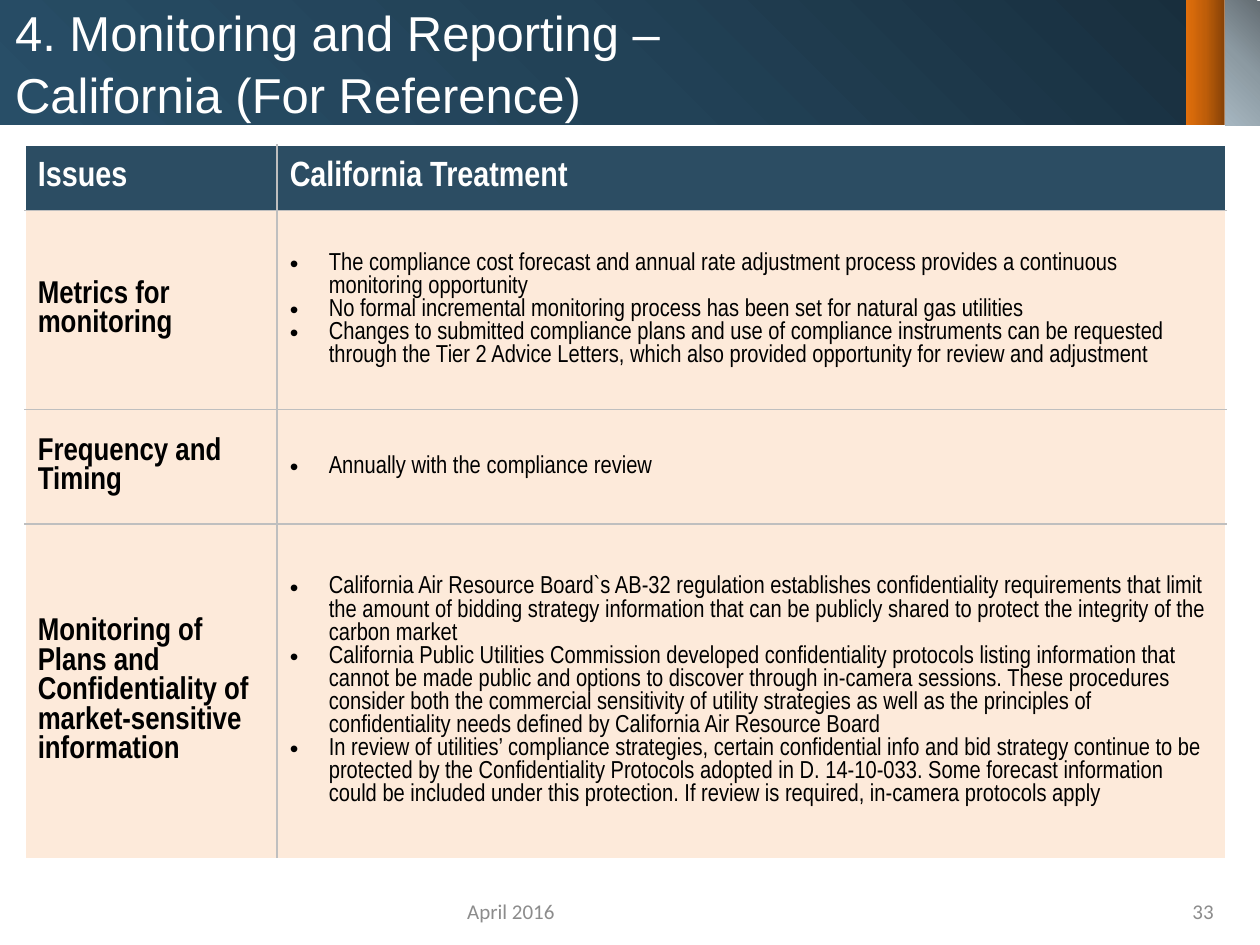
"""Build the California monitoring and reporting reference slide."""
from dataclasses import dataclass

import lxml.etree
import pptx
import pptx.dml.color
import pptx.enum.shapes
import pptx.enum.text
import pptx.oxml.ns
import pptx.util

COLORS = {"head": "2C4D63", "body": "FDEADA", "line": "BFBFBF", "footer": "8C8C8C",
          "white": "FFFFFF", "black": "000000"}
WIDTH, HEIGHT = pptx.util.Inches(10), pptx.util.Inches(7.5)
GRID_COLUMNS, GRID_ROWS = 100, 75
COLUMN_SPANS = (20, 75.3)
ROW_SPANS = (5.2, 15.8, 9.1, 26.6)
BULLET_INDENT = 3.1
ALIGN = pptx.enum.text.PP_ALIGN
MIDDLE = pptx.enum.text.MSO_ANCHOR.MIDDLE
qn = pptx.oxml.ns.qn


@dataclass
class Area:
    left: float
    top: float
    width: float
    height: float


@dataclass
class Band:
    area: Area
    stops: tuple[str, str, str]
    angle: int
    rotation: int = 0


@dataclass
class Footer:
    area: Area
    text: str
    align: ALIGN


@dataclass
class Issue:
    name: str
    treatments: tuple[str, ...]


BANDS = (
    Band(Area(0, 0, 96, 9.9), ("182E3D", "224257", "284E67"), 135),
    Band(Area(90.7, 3.4, 9.9, 3.1), ("864207", "BF5E09", "E26F0B"), 90, 90),
    Band(Area(93.7, 3.6, 9.9, 2.8), ("636C72", "8C9AA2", "A6B6C0"), 45, 90),
)
FOOTERS = (
    Footer(Area(89.4, 70.8, 7.9, 3.1), "33", ALIGN.RIGHT),
    Footer(Area(31.1, 70.6, 18.9, 3.5), "April 2016", ALIGN.CENTER),
)
TITLE_AREA = Area(0.2, 0.6, 93.9, 8.6)
TABLE_AREA = Area(2, 11.5, sum(COLUMN_SPANS), sum(ROW_SPANS))
HEADINGS = ("Issues", "California Treatment")
ISSUES = (
    Issue("Metrics for monitoring", (
        "The compliance cost forecast and annual rate adjustment process provides a "
        "continuous monitoring opportunity",
        "No formal incremental monitoring process has been set for natural gas utilities",
        "Changes to submitted compliance plans and use of compliance instruments can be "
        "requested through the Tier 2 Advice Letters, which also provided opportunity for "
        "review and adjustment")),
    Issue("Frequency and Timing", ("Annually with the compliance review",)),
    Issue("Monitoring of Plans and Confidentiality of market-sensitive information", (
        "California Air Resource Board`s AB-32 regulation establishes confidentiality "
        "requirements that limit the amount of bidding strategy information that can be "
        "publicly shared to protect the integrity of the carbon market",
        "California Public Utilities Commission developed confidentiality protocols listing "
        "information that cannot be made public and options to discover through in-camera "
        "sessions. These procedures consider both the commercial sensitivity of utility "
        "strategies as well as the principles of confidentiality needs defined by California "
        "Air Resource Board",
        "In review of utilities’ compliance strategies, certain confidential info and bid "
        "strategy continue to be protected by the Confidentiality Protocols adopted in "
        "D. 14-10-033. Some forecast information could be included under this protection. If "
        "review is required, in-camera protocols apply")),
)


def across(columns: float) -> int:
    return round(WIDTH * columns / GRID_COLUMNS)


def down(rows: float) -> int:
    return round(HEIGHT * rows / GRID_ROWS)


def place(area: Area) -> tuple[int, int, int, int]:
    return across(area.left), down(area.top), across(area.width), down(area.height)


def rgb(color: str) -> pptx.dml.color.RGBColor:
    return pptx.dml.color.RGBColor.from_string(COLORS[color])


def style(para, face: str, size: float, color: str, bold: bool = False) -> None:
    para.font.name, para.font.size, para.font.bold = face, pptx.util.Pt(size), bold
    para.font.color.rgb = rgb(color)


def add_band(page, band: Band) -> None:
    shape = page.shapes.add_shape(pptx.enum.shapes.MSO_SHAPE.RECTANGLE, *place(band.area))
    shape.shadow.inherit = False
    shape.rotation = band.rotation
    shape.line.fill.background()
    shape.fill.gradient()
    gradient = shape.element.spPr.find(qn("a:gradFill"))
    stops = gradient.find(qn("a:gsLst"))
    stops.clear()
    for index, color in enumerate(band.stops):
        stop = lxml.etree.SubElement(stops, qn("a:gs"), pos=str(index * 50000))
        lxml.etree.SubElement(stop, qn("a:srgbClr"), val=color)
    gradient.find(qn("a:lin")).set("ang", str(band.angle * 60000))


def add_title(page) -> None:
    title = page.shapes.title
    title.left, title.top, title.width, title.height = place(TITLE_AREA)
    frame = title.text_frame
    frame.text = "4. Monitoring and Reporting – \vCalifornia (For Reference)"
    frame.auto_size = pptx.enum.text.MSO_AUTO_SIZE.NONE
    frame.vertical_anchor = MIDDLE
    para = frame.paragraphs[0]
    para.alignment, para.line_spacing = ALIGN.LEFT, 1.05
    style(para, "Arial", 28, "white")
    title.element.getparent().append(title.element)


def add_footer(page, footer: Footer) -> None:
    frame = page.shapes.add_textbox(*place(footer.area)).text_frame
    frame.word_wrap, frame.vertical_anchor = True, MIDDLE
    para = frame.paragraphs[0]
    para.text, para.alignment = footer.text, footer.align
    style(para, "Calibri", 12, "footer")


def add_border(cell, side: str) -> None:
    line = lxml.etree.SubElement(cell._tc.get_or_add_tcPr(), qn(f"a:ln{side}"),
                                 w=str(pptx.util.Pt(1)))
    fill = lxml.etree.SubElement(line, qn("a:solidFill"))
    lxml.etree.SubElement(fill, qn("a:srgbClr"), val=COLORS["line"])


def add_bullet(para) -> None:
    properties = para._p.get_or_add_pPr()
    properties.set("marL", str(across(BULLET_INDENT)))
    properties.set("indent", str(-across(BULLET_INDENT)))
    lxml.etree.SubElement(properties, qn("a:buFont"), typeface="Arial")
    lxml.etree.SubElement(properties, qn("a:buChar"), char="•")


def fill_cell(table, row: int, column: int, texts: tuple[str, ...]) -> None:
    cell = table.cell(row, column)
    add_border(cell, "L" if column else "R")
    if row:
        add_border(cell, "T")
    if row < len(ROW_SPANS) - 1:
        add_border(cell, "B")
    cell.fill.solid()
    cell.fill.fore_color.rgb = rgb("body" if row else "head")
    cell.vertical_anchor = MIDDLE
    cell.margin_left = cell.margin_right = across(1)
    cell.margin_top = cell.margin_bottom = down(1)
    bulleted = row > 0 and column > 0
    size = 14 if bulleted else 18 if row else 20
    cell.text_frame.text = "\n".join(texts)
    for para in cell.text_frame.paragraphs:
        if bulleted:
            add_bullet(para)
        style(para, "Arial Narrow", size, "black" if row else "white", not bulleted)


def add_issue_table(page) -> None:
    table = page.shapes.add_table(len(ROW_SPANS), len(COLUMN_SPANS), *place(TABLE_AREA)).table
    table.first_row = table.horz_banding = False
    for column, span in zip(table.columns, COLUMN_SPANS):
        column.width = across(span)
    for row, span in zip(table.rows, ROW_SPANS):
        row.height = down(span)
    contents = [tuple((heading,) for heading in HEADINGS)]
    contents += [((issue.name,), issue.treatments) for issue in ISSUES]
    for row, cells in enumerate(contents):
        for column, texts in enumerate(cells):
            fill_cell(table, row, column, texts)


def main() -> None:
    deck = pptx.Presentation()
    deck.slide_width, deck.slide_height = WIDTH, HEIGHT
    page = deck.slides.add_slide(deck.slide_layouts[5])
    for band in BANDS:
        add_band(page, band)
    add_title(page)
    add_issue_table(page)
    for footer in FOOTERS:
        add_footer(page, footer)
    deck.save("out.pptx")


if __name__ == "__main__":
    main()
